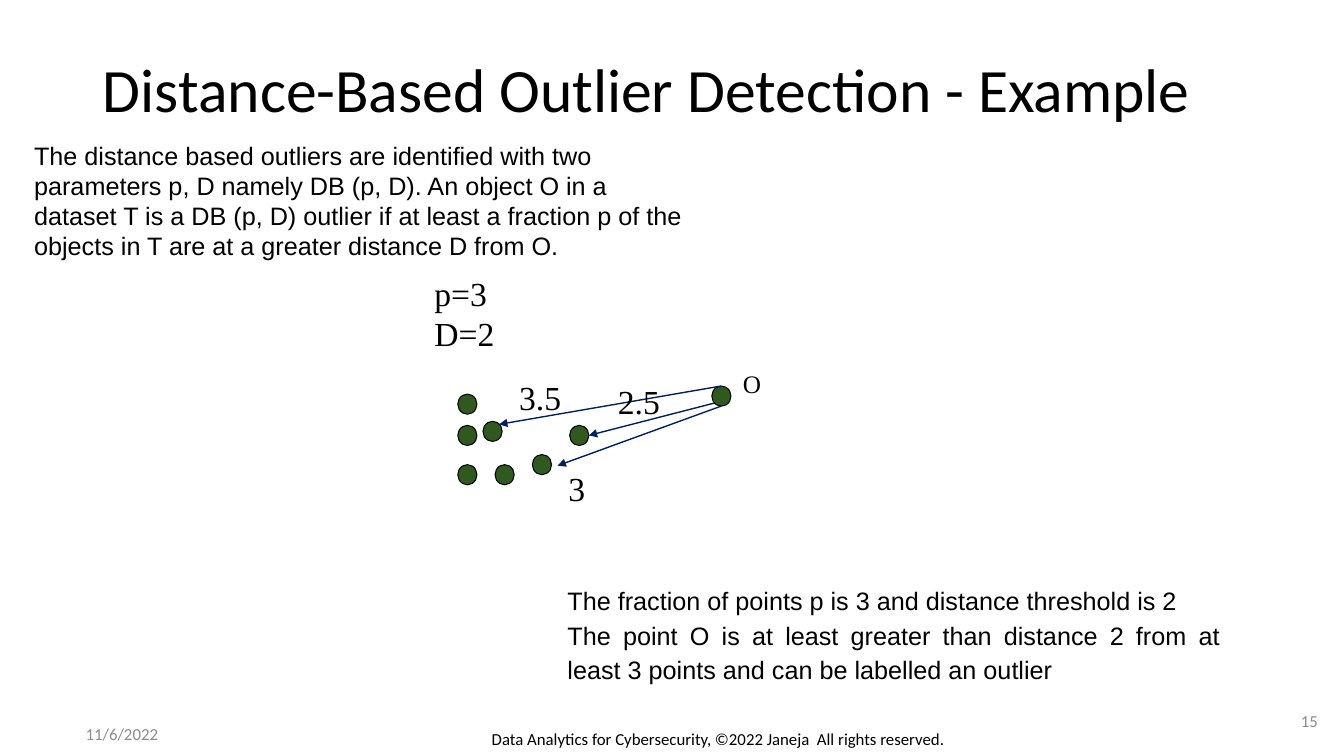
from lxml import etree
from pptx import Presentation
from pptx.dml.color import RGBColor
from pptx.enum.shapes import MSO_CONNECTOR, MSO_SHAPE
from pptx.enum.text import MSO_ANCHOR, PP_ALIGN
from pptx.oxml.ns import qn
from pptx.util import Inches, Pt

OVAL = MSO_SHAPE.OVAL
LINE = MSO_CONNECTOR.STRAIGHT
TOP, MID, LOW = MSO_ANCHOR.TOP, MSO_ANCHOR.MIDDLE, MSO_ANCHOR.BOTTOM
LEFT, CENTER, RIGHT = PP_ALIGN.LEFT, PP_ALIGN.CENTER, PP_ALIGN.RIGHT
JUST = PP_ALIGN.JUSTIFY

SANS, SERIF, BODY = "Arial", "Times New Roman", "Calibri"
BLACK, GREY, GREEN, NAVY = "000000", "8C8C8C", "2F591F", "002060"


def color(code):
    return RGBColor.from_string(code)


class Board:
    """Holds the slide and draws each kind of element in its style."""

    dot_w, dot_h = 0.19, 0.2

    def __init__(self, slide):
        self.slide = slide
        self.shapes = slide.shapes

    def fill_text(self, frame, text, font, size, tint=BLACK, align=LEFT,
                  anchor=TOP, space=1.0, wrap=True):
        frame.text = text
        frame.word_wrap = wrap
        frame.vertical_anchor = anchor
        for para in frame.paragraphs:
            para.alignment = align
            para.line_spacing = space
            for run in para.runs:
                run.font.name = font
                run.font.size = Pt(size)
                run.font.color.rgb = color(tint)

    def title(self, box, text):
        shape = self.shapes.title
        shape.left, shape.top, shape.width, shape.height = map(Inches, box)
        self.fill_text(shape.text_frame, text, BODY, 44, anchor=MID, space=0.9)

    def text(self, box, text, font, size, **style):
        shape = self.shapes.add_textbox(*map(Inches, box))
        self.fill_text(shape.text_frame, text, font, size, **style)

    def dot(self, x, y):
        box = map(Inches, (x, y, self.dot_w, self.dot_h))
        shape = self.shapes.add_shape(OVAL, *box)
        shape.shadow.inherit = False
        shape.fill.solid()
        shape.fill.fore_color.rgb = color(GREEN)
        shape.line.color.rgb = color(BLACK)
        shape.line.width = Pt(0.75)

    def arrow(self, start, end):
        link = self.shapes.add_connector(LINE, *map(Inches, start + end))
        link.line.color.rgb = color(NAVY)
        link.line.width = Pt(1)
        props = link.line._get_or_add_ln()
        etree.SubElement(props, qn("a:tailEnd"), type="triangle")
        etree.SubElement(link._element.spPr, qn("a:effectLst"))


def main():
    deck = Presentation()
    deck.slide_width, deck.slide_height = Inches(13.33), Inches(7.5)
    board = Board(deck.slides.add_slide(deck.slide_layouts[5]))

    board.title((0.92, 0.19, 11.5, 1.45),
                "Distance-Based Outlier Detection - Example")
    board.text((0.24, 1.34, 6.67, 1.31),
               "The distance based outliers are identified with two "
               "parameters p, D namely DB (p, D). An object O in a dataset T "
               "is a DB (p, D) outlier if at least a fraction p of the "
               "objects in T are at a greater distance D from O.", SANS, 18)

    dots = [(4.54, 3.91), (4.54, 4.22), (4.54, 4.61), (4.79, 4.18),
            (4.91, 4.61), (5.28, 4.51), (5.65, 4.22), (7.06, 3.83)]
    for x, y in dots:
        board.dot(x, y)

    arrows = [((7.15, 3.83), (4.95, 4.21)),
              ((7.08, 4.0), (5.84, 4.32)),
              ((7.15, 4.03), (5.53, 4.62))]
    for start, end in arrows:
        board.arrow(start, end)

    labels = [(4.21, 2.66, "p=3\nD=2"), (5.05, 3.69, "3.5"),
              (6.03, 3.73, "2.5"), (5.54, 4.59, "3")]
    for x, y, label in labels:
        board.text((x, y, 1.03, 0.36), label, SERIF, 24)
    board.text((7.27, 3.61, 0.38, 0.4), "O", SERIF, 18, wrap=False)

    board.text((5.53, 5.71, 6.67, 1.12),
               "The fraction of points p is 3 and distance threshold is 2\n"
               "The point O is at least greater than distance 2 from at "
               "least 3 points and can be labelled an outlier",
               SANS, 18, align=JUST, space=1.15)

    board.text((0.75, 7.08, 1.01, 0.4), "11/6/2022", BODY, 12,
               tint=GREY, anchor=MID)
    board.text((4.66, 7.08, 4.93, 0.4),
               "Data Analytics for Cybersecurity, ©2022 Janeja  "
               "All rights reserved.", BODY, 12, align=CENTER, anchor=LOW)
    board.text((10.17, 6.95, 3, 0.4), "15", BODY, 12,
               tint=GREY, align=RIGHT, anchor=MID)

    deck.save("out.pptx")


if __name__ == "__main__":
    main()
